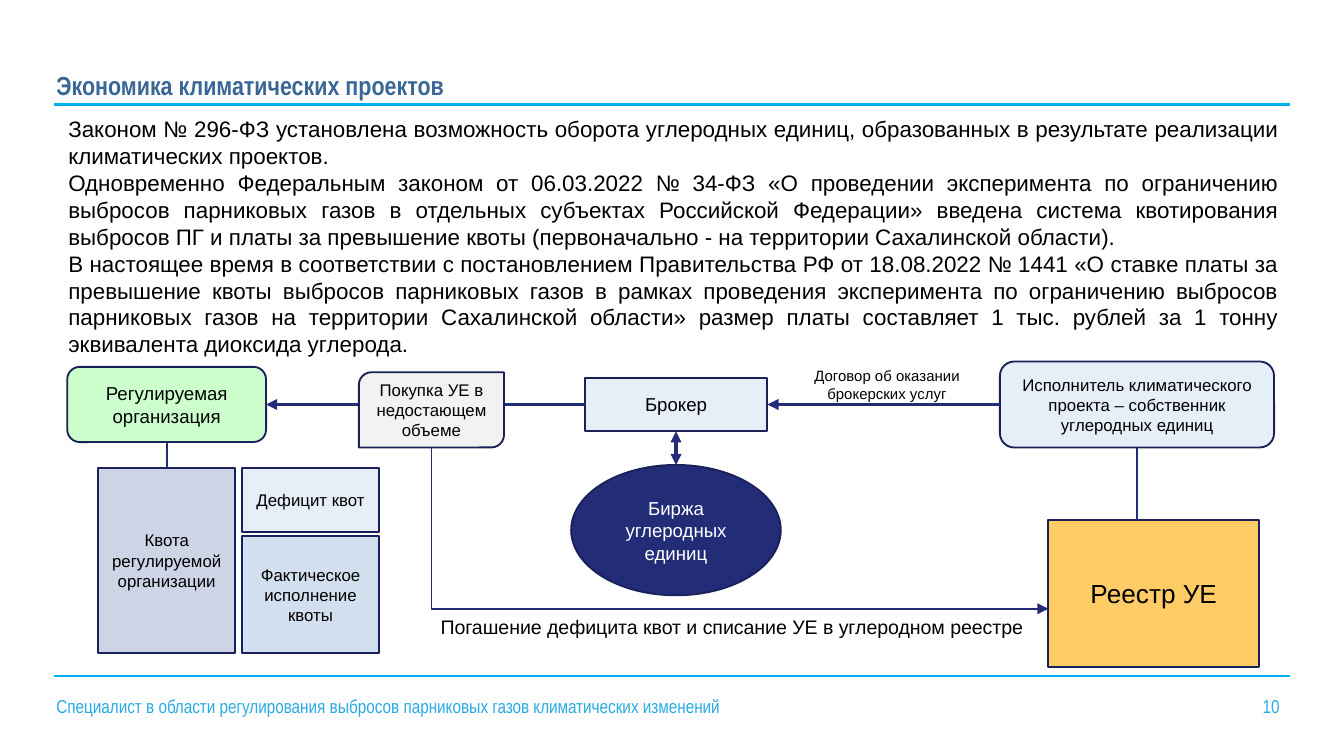
from dataclasses import dataclass
from typing import NamedTuple, Optional

from pptx import Presentation, util as u
from pptx.dml.color import RGBColor
from pptx.enum import shapes, text
from pptx.oxml import ns, xmlchemy

PX = 9144  # EMU per px, 100 px to the inch
SLIDE_WIDTH = 1000 * PX
SLIDE_HEIGHT = SLIDE_WIDTH * 9 // 16


@dataclass(frozen=True)
class Theme:
    font: str = "Arial"
    narrow: str = "Arial Narrow"
    title: str = "3A6796"
    rule: str = "00B0F0"
    footer: str = "29ABE2"
    ink: str = "000000"
    white: str = "FFFFFF"
    navy: str = "232C77"
    outline: str = "1A2158"
    green: str = "CCFFCC"
    pale: str = "E6EFF8"
    lavender: str = "CCD4E6"
    sky: str = "D2DFEE"
    grey: str = "F2F2F2"
    amber: str = "FFCC66"
    title_size: float = 14
    body_size: float = 12
    caption_size: float = 10.5
    node_size: float = 10
    small_size: float = 9
    note_size: float = 8


THEME = Theme()
KIND = shapes.MSO_SHAPE
LEFT, CENTER, JUSTIFY = text.PP_ALIGN.LEFT, text.PP_ALIGN.CENTER, text.PP_ALIGN.JUSTIFY
TOP_SIDE, LEFT_SIDE, BOTTOM_SIDE, RIGHT_SIDE = range(4)


class Box(NamedTuple):
    left: int
    top: int
    width: int
    height: int

    def emu(self) -> list[int]:
        return [value * PX for value in self]


class Node(NamedTuple):
    label: str
    box: Box
    fill: str
    kind: int = KIND.RECTANGLE
    size: float = THEME.small_size
    color: str = THEME.ink


class Link(NamedTuple):
    start: str
    start_side: int
    end: str
    end_side: int
    width: float
    head: bool = False
    tail: bool = True


NODES = {
    "company": Node("Регулируемая организация", Box(50, 273, 148, 56), THEME.green,
                    KIND.ROUNDED_RECTANGLE, THEME.node_size),
    "developer": Node("Исполнитель климатического проекта – собственник углеродных единиц",
                      Box(744, 269, 204, 64), THEME.pale, KIND.ROUNDED_RECTANGLE),
    "quota": Node("Квота регулируемой организации", Box(73, 348, 102, 138), THEME.lavender),
    "actual": Node("Фактическое исполнение квоты", Box(180, 399, 102, 87), THEME.sky),
    "deficit": Node("Дефицит квот", Box(180, 348, 102, 48), THEME.pale),
    "broker": Node("Брокер", Box(435, 281, 136, 40), THEME.pale,
                   KIND.FLOWCHART_PROCESS, THEME.node_size),
    "exchange": Node("Биржа углеродных единиц", Box(425, 346, 156, 97), THEME.navy,
                     KIND.OVAL, THEME.node_size, THEME.white),
    "registry": Node("Реестр УЕ", Box(780, 387, 157, 109), THEME.amber,
                     KIND.FLOWCHART_PROCESS, THEME.title_size),
}
PURCHASE = Node("Покупка УЕ в недостающем объеме", Box(267, 277, 108, 56), THEME.grey,
                KIND.ROUND_2_DIAG_RECTANGLE)
LINKS = [
    Link("broker", BOTTOM_SIDE, "exchange", TOP_SIDE, 1.75, head=True),
    Link("developer", LEFT_SIDE, "broker", RIGHT_SIDE, 1.25),
    Link("broker", LEFT_SIDE, "company", RIGHT_SIDE, 1.25),
    Link("company", BOTTOM_SIDE, "quota", TOP_SIDE, 1, tail=False),
]
BODY = [
    "Законом № 296-ФЗ установлена возможность оборота углеродных единиц, образованных "
    "в результате реализации климатических проектов.",
    "Одновременно Федеральным законом от 06.03.2022 № 34-ФЗ «О проведении эксперимента "
    "по ограничению выбросов парниковых газов в отдельных субъектах Российской Федерации» "
    "введена система квотирования выбросов ПГ и платы за превышение квоты "
    "(первоначально - на территории Сахалинской области).",
    "В настоящее время в соответствии с постановлением Правительства РФ от 18.08.2022 "
    "№ 1441 «О ставке платы за превышение квоты выбросов парниковых газов в рамках "
    "проведения эксперимента по ограничению выбросов парниковых газов на территории "
    "Сахалинской области» размер платы составляет 1 тыс. рублей за 1 тонну "
    "эквивалента диоксида углерода.",
]
FOOTER = "Специалист в области регулирования выбросов парниковых газов климатических изменений"


def format_text(frame, size: float, color: str = THEME.ink, align=LEFT,
                font: str = THEME.font, bold: Optional[bool] = None) -> None:
    for paragraph in frame.paragraphs:
        paragraph.alignment = align
        for run in paragraph.runs:
            run.font.name, run.font.size, run.font.bold = font, u.Pt(size), bold
            run.font.color.rgb = RGBColor.from_string(color)


def add_text(slide, box: Box, content: str):
    frame = slide.shapes.add_textbox(*box.emu()).text_frame
    frame.word_wrap = True
    frame.text = content
    return frame


def add_node(slide, node: Node):
    shape = slide.shapes.add_shape(node.kind, *node.box.emu())
    shape.shadow.inherit = False
    shape.fill.solid()
    shape.fill.fore_color.rgb = RGBColor.from_string(node.fill)
    shape.line.color.rgb = RGBColor.from_string(THEME.outline)
    shape.line.width = u.Pt(1)
    frame = shape.text_frame
    frame.text = node.label
    frame.vertical_anchor = text.MSO_ANCHOR.MIDDLE
    format_text(frame, node.size, node.color, CENTER)
    return shape


def add_line(slide, start: tuple[int, int], end: tuple[int, int], width: float,
             color: str = THEME.navy, head: bool = False, tail: bool = False):
    connector = slide.shapes.add_connector(
        shapes.MSO_CONNECTOR.STRAIGHT, *(value * PX for value in start + end))
    connector.line.color.rgb = RGBColor.from_string(color)
    connector.line.width = u.Pt(width)
    properties = connector._element.spPr
    line = properties.find(ns.qn("a:ln"))
    for tag, wanted in (("a:headEnd", head), ("a:tailEnd", tail)):
        if wanted:
            arrow = xmlchemy.OxmlElement(tag)
            arrow.set("type", "triangle")
            line.append(arrow)
    properties.append(xmlchemy.OxmlElement("a:effectLst"))
    return connector


def add_down_right_arrow(slide, start: tuple[int, int], end: tuple[int, int]) -> None:
    """Draw an elbow that goes down, then right: a mirrored quarter-turned bend."""
    connector = add_line(slide, start, end, 1, tail=True)
    across, down = end[0] - start[0], end[1] - start[1]
    connector.left = (start[0] + end[0] - down) * PX // 2
    connector.top = (start[1] + end[1] - across) * PX // 2
    connector.width, connector.height = down * PX, across * PX
    properties = connector._element.spPr
    properties.find(ns.qn("a:prstGeom")).set("prst", "bentConnector2")
    transform = properties.find(ns.qn("a:xfrm"))
    transform.set("rot", str(270 * 60000))
    transform.set("flipH", "1")


def add_title(slide) -> None:
    title = slide.shapes.title
    title.left, title.top, title.width, title.height = Box(42, 28, 781, 52).emu()
    frame = title.text_frame
    frame.text = "Экономика климатических проектов"
    frame.margin_left = 0
    frame.vertical_anchor = text.MSO_ANCHOR.BOTTOM
    frame.auto_size = text.MSO_AUTO_SIZE.NONE
    frame.paragraphs[0].line_spacing = 0.9
    format_text(frame, THEME.title_size, THEME.title, font=THEME.narrow, bold=True)


def add_footer(slide) -> None:
    frame = add_text(slide, Box(42, 517, 921, 30), f"{FOOTER}\t10")
    frame.margin_left = frame.margin_top = frame.margin_right = 0
    tabs = xmlchemy.OxmlElement("a:tabLst")
    stop = xmlchemy.OxmlElement("a:tab")
    stop.set("pos", str(910 * PX))
    stop.set("algn", "r")
    tabs.append(stop)
    frame.paragraphs[0]._p.get_or_add_pPr().append(tabs)
    format_text(frame, THEME.node_size, THEME.footer, font=THEME.narrow)


def main() -> None:
    presentation = Presentation()
    presentation.slide_width, presentation.slide_height = SLIDE_WIDTH, SLIDE_HEIGHT
    slide = presentation.slides.add_slide(presentation.slide_layouts[5])
    for y in (78, 503):
        add_line(slide, (40, y), (960, y), 1.5, THEME.rule)
    add_title(slide)
    add_footer(slide)
    format_text(add_text(slide, Box(41, 81, 921, 192), "\n".join(BODY)),
                THEME.body_size, align=JUSTIFY)

    drawn = {name: add_node(slide, node) for name, node in NODES.items()}
    for link in LINKS:
        connector = add_line(slide, (0, 0), (0, 0), link.width, head=link.head, tail=link.tail)
        connector.begin_connect(drawn[link.start], link.start_side)
        connector.end_connect(drawn[link.end], link.end_side)
    registry_line = add_line(slide, (846, 333), (846, 387), 1)
    registry_line.begin_connect(drawn["developer"], BOTTOM_SIDE)
    add_node(slide, PURCHASE)
    add_down_right_arrow(slide, (321, 333), (780, 453))

    format_text(add_text(slide, Box(318, 453, 470, 28),
                         "Погашение дефицита квот и списание УЕ в углеродном реестре"),
                THEME.caption_size)
    format_text(add_text(slide, Box(589, 268, 142, 37), "Договор об оказании брокерских услуг"),
                THEME.note_size, align=CENTER)
    presentation.save("out.pptx")


if __name__ == "__main__":
    main()
